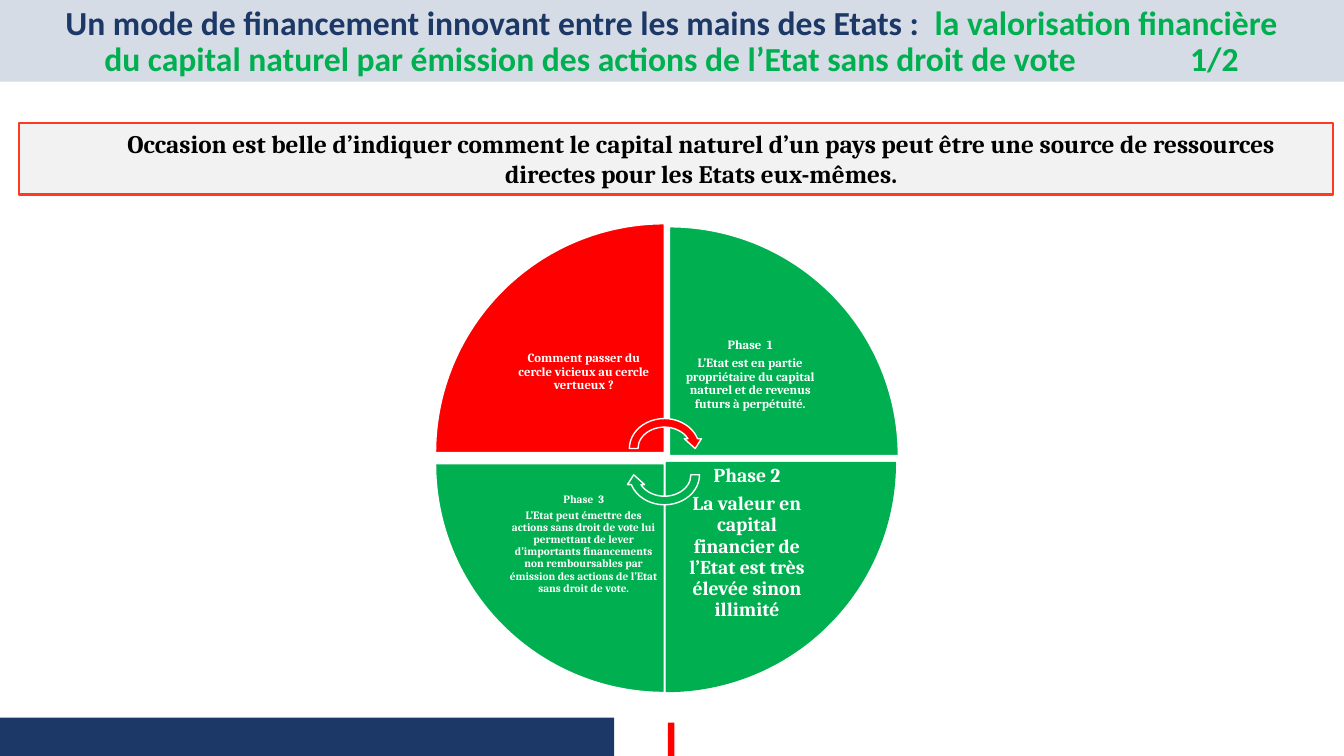
from lxml import etree
from pptx import Presentation
from pptx.dml.color import RGBColor
from pptx.enum.shapes import MSO_SHAPE
from pptx.enum.text import MSO_ANCHOR, MSO_AUTO_SIZE, PP_ALIGN
from pptx.oxml.ns import qn
from pptx.util import Inches, Pt

RECT = MSO_SHAPE.RECTANGLE
WEDGE = MSO_SHAPE.PIE_WEDGE
ROUND = MSO_SHAPE.CIRCULAR_ARROW
ARROW = MSO_SHAPE.RIGHT_ARROW
CENTER = PP_ALIGN.CENTER
MIDDLE = MSO_ANCHOR.MIDDLE
TOP = MSO_ANCHOR.TOP

NAVY = RGBColor(0x1C, 0x38, 0x67)
GREEN = RGBColor(0x00, 0xB0, 0x50)
RED = RGBColor(0xFF, 0x00, 0x00)
CORAL = RGBColor(0xFF, 0x3A, 0x21)
MIST = RGBColor(0xD6, 0xDC, 0xE5)
PALE = RGBColor(0xF2, 0xF2, 0xF2)
WHITE = RGBColor(0xFF, 0xFF, 0xFF)
BLACK = RGBColor(0x00, 0x00, 0x00)

SIDE = 2.27   # radius of a quarter
LABEL = 1.6   # side of a quarter's text box

# left, top, turn, fill, line, text size, inset, paragraphs
PHASES = [
    (4.32, 2.22, 0, RED, WHITE, 9, 0.07,
     ["Comment passer du cercle vicieux au cercle vertueux ?"]),
    (6.64, 2.25, 90, GREEN, WHITE, 9, 0.07,
     ["Phase  1",
      "L’Etat est en partie propriétaire du capital naturel et de revenus "
      "futurs à perpétuité."]),
    (6.61, 4.59, 180, GREEN, GREEN, 14, 0.11,
     ["Phase 2",
      "La valeur en capital financier de l’Etat est très élevée sinon "
      "illimité"]),
    (4.32, 4.6, 270, GREEN, WHITE, 8, 0.06,
     ["Phase  3",
      "L’Etat peut émettre des actions sans droit de vote lui permettant de "
      "lever d’importants financements non remboursables par émission des "
      "actions de l’Etat sans droit de vote."]),
]


class Deck:
    def __init__(self):
        self.prs = Presentation()
        self.prs.slide_width = Inches(13.33)
        self.prs.slide_height = Inches(7.5)
        self.slide = self.prs.slides.add_slide(self.prs.slide_layouts[5])
        self.shapes = self.slide.shapes

    def style(self, run, size, color, face="Cambria"):
        font = run.font
        font.name, font.size, font.bold = face, Pt(size), True
        font.color.rgb = color

    def shape(self, kind, box, fill, line=None, width=1, turn=0):
        item = self.shapes.add_shape(kind, *map(Inches, box))
        item.shadow.inherit = False
        item.rotation = turn
        item.fill.solid()
        item.fill.fore_color.rgb = fill
        if line is None:
            item.line.fill.background()
        else:
            item.line.color.rgb = line
            item.line.width = Pt(width)
        return item

    def title(self, box, parts, stop):
        """Fill the title with coloured parts and one tab stop."""
        item = self.shapes.title
        item.left, item.top, item.width, item.height = map(Inches, box)
        # Bring the title in front of the band
        self.shapes._spTree.append(item._element)
        frame = item.text_frame
        frame.word_wrap = True
        frame.auto_size = MSO_AUTO_SIZE.NONE
        frame.vertical_anchor = MIDDLE
        para = frame.paragraphs[0]
        para.alignment, para.line_spacing = CENTER, 0.9
        tabs = etree.SubElement(para._p.get_or_add_pPr(), qn("a:tabLst"))
        etree.SubElement(tabs, qn("a:tab"), pos=str(Inches(stop)), algn="l")
        for text, color in parts:
            run = para.add_run()
            run.text = text
            self.style(run, 24, color, "Calibri")

    def banner(self, box, text):
        item = self.shape(RECT, box, PALE, CORAL, 1.5)
        frame = item.text_frame
        frame.text = text
        frame.word_wrap = True
        frame.vertical_anchor = TOP
        para = frame.paragraphs[0]
        para.alignment = CENTER
        para._p.get_or_add_pPr().set("marL", str(Inches(0.5)))
        self.style(para.runs[0], 18, BLACK)

    def label(self, box, lines, size, inset):
        frame = self.shapes.add_textbox(*map(Inches, box)).text_frame
        frame.text = "\n".join(lines)
        frame.word_wrap = True
        frame.vertical_anchor = MIDDLE
        frame.margin_left = frame.margin_right = Inches(inset)
        frame.margin_top = frame.margin_bottom = Inches(inset)
        for para in frame.paragraphs:
            para.alignment, para.line_spacing = CENTER, 0.9
            para.space_after = Pt(round(0.35 * size, 1))
            self.style(para.runs[0], size, WHITE)

    def phase(self, left, top, turn, fill, line, size, inset, lines):
        """Draw a quarter with its text in the corner next to the centre."""
        self.shape(WEDGE, (left, top, SIDE, SIDE), fill, line, turn=turn)
        gap = SIDE - LABEL
        x = left + (gap if turn in (0, 270) else 0)
        y = top + (gap if turn in (0, 90) else 0)
        self.label((x, y, LABEL, LABEL), lines, size, inset)


def main():
    deck = Deck()
    deck.shape(RECT, (0, 0, 13.33, 0.81), MIST)
    deck.shape(RECT, (0, 7.12, 6.09, 0.38), NAVY)
    deck.title((0.4, 0.1, 12.52, 0.64), [
        ("Un mode de financement innovant entre les mains des Etats :  ", NAVY),
        ("la valorisation financière du capital naturel par émission des "
         "actions de l’Etat sans droit de vote\t1/2", GREEN),
    ], 10.77)
    deck.banner((0.19, 1.22, 13.03, 0.71),
                "Occasion est belle d’indiquer comment le capital naturel d’un "
                "pays peut être une source de ressources directes pour les "
                "Etats eux-mêmes.")
    for phase in PHASES:
        deck.phase(*phase)
    for top, fill, turn in ((4.11, RED, 0), (4.37, GREEN, 180)):
        deck.shape(ROUND, (6.2, top, 0.78, 0.68), fill, WHITE, turn=turn)
    deck.shape(ARROW, (6.32, 7.44, 0.67, 0.13), RED, turn=90)
    deck.prs.save("out.pptx")


if __name__ == "__main__":
    main()
